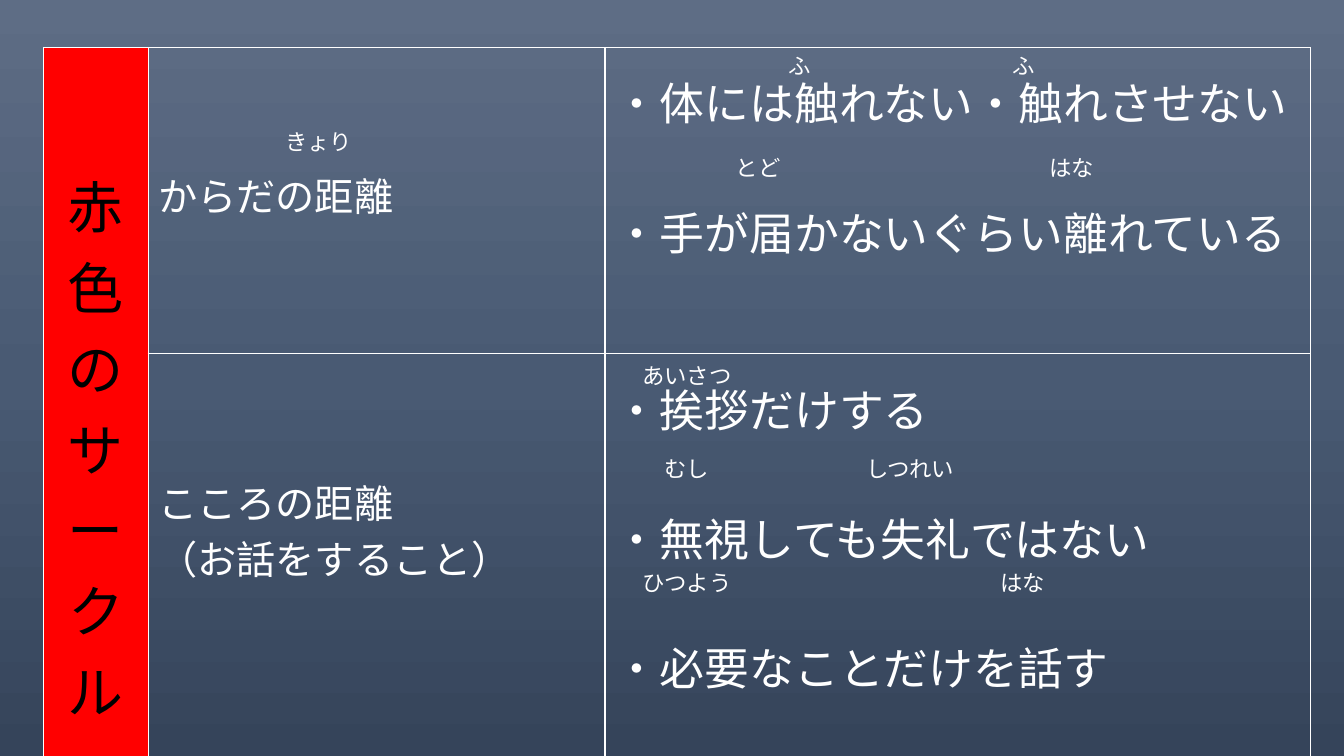
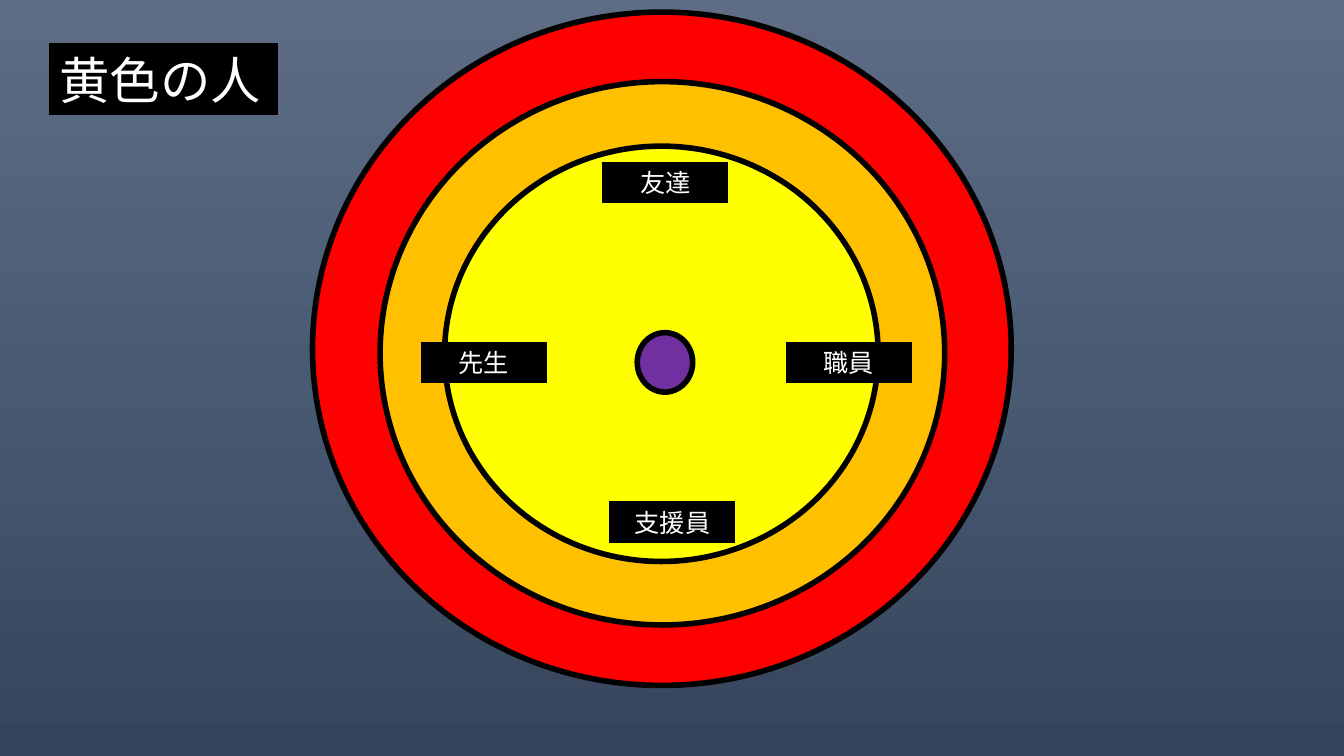
from copy import deepcopy
from dataclasses import dataclass

from lxml.etree import SubElement
from pptx import Presentation
from pptx.dml.color import RGBColor
from pptx.enum.shapes import MSO_SHAPE
from pptx.enum.text import MSO_ANCHOR, PP_ALIGN
from pptx.oxml.ns import qn
from pptx.util import Inches, Pt

FONT = "Noto Sans CJK JP"
WHITE, BLACK, RED = "FFFFFF", "000000", "FF0000"
ORANGE, YELLOW, PURPLE = "FFC000", "FFFF00", "7030A0"
GRADIENT = ("5E6D85", "495A73", "35445A")
RUBY_SIZE = 16
RUBY_EM = RUBY_SIZE / 72


@dataclass(frozen=True)
class Ruby:
    text: str
    line_left: float
    top: float
    column: int = 0


@dataclass(frozen=True)
class Box:
    left: float
    top: float
    width: float
    height: float

    def lengths(self):
        return tuple(Inches(n) for n in (self.left, self.top, self.width, self.height))


@dataclass(frozen=True)
class Circle:
    box: Box
    fill: str


@dataclass(frozen=True)
class Label:
    text: str
    box: Box
    size: float = 18
    align: PP_ALIGN = PP_ALIGN.CENTER


@dataclass(frozen=True)
class CellText:
    lines: tuple
    size: float
    top_margin: float
    gap: float = 0
    colour: str = WHITE


RUBIES = (
    Ruby("ふ", 7.72, 0.47),
    Ruby("ふ", 7.72, 0.47, 10),
    Ruby("とど", 7.2, 1.48),
    Ruby("はな", 7.2, 1.48, 14),
    Ruby("きょり", 2.73, 1.22),
    Ruby("あいさつ", 6.27, 3.54),
    Ruby("むし", 6.27, 4.47, 1),
    Ruby("しつれい", 6.27, 4.47, 10),
    Ruby("ひつよう", 6.27, 5.6),
    Ruby("はな", 6.27, 5.6, 16),
)

HEADING = CellText(("赤色のサークル",), 40, 1.15, colour=BLACK)

DISTANCES = (
    (
        CellText(("からだの距離",), 28, 1.18),
        CellText(("・体には触れない・触れさせない", "・手が届かないぐらい離れている"), 32, 0.21, 46),
    ),
    (
        CellText(("こころの距離", "（お話をすること）"), 28, 1.18),
        CellText(
            ("・挨拶だけする", "・無視しても失礼ではない", "・必要なことだけを話す"),
            32, 0.21, 46,
        ),
    ),
)

CIRCLES = (
    Circle(Box(3.1, 0.12, 6.93, 6.68), RED),
    Circle(Box(3.77, 0.81, 5.6, 5.39), ORANGE),
    Circle(Box(4.41, 1.45, 4.3, 4.12), YELLOW),
    Circle(Box(6.32, 3.3, 0.55, 0.59), PURPLE),
)

LABELS = (
    Label("先生", Box(4.18, 3.4, 1.24, 0.4)),
    Label("支援員", Box(6.05, 4.98, 1.24, 0.4)),
    Label("職員", Box(7.8, 3.4, 1.24, 0.4)),
    Label("友達", Box(5.98, 1.61, 1.24, 0.4)),
    Label("黄色の人", Box(0.49, 0.43, 2.26, 0.71), 36, PP_ALIGN.LEFT),
)


def rgb(colour: str) -> RGBColor:
    return RGBColor.from_string(colour)


def add_run(paragraph, text: str, size: float, colour: str = WHITE) -> None:
    run = paragraph.add_run()
    run.text = text
    run.font.size = Pt(size)
    run.font.name = FONT
    run.font.color.rgb = rgb(colour)
    SubElement(run.font._element, qn("a:ea"), typeface=FONT)


def set_background(master) -> None:
    fill = master.background.fill
    fill.gradient()
    fill.gradient_angle = 270
    stop_list = master.element.find(".//" + qn("p:bg")).find(".//" + qn("a:gsLst"))
    stop_list.append(deepcopy(stop_list[0]))
    for index, (stop, colour) in enumerate(zip(fill.gradient_stops, GRADIENT)):
        stop.position = index / (len(GRADIENT) - 1)
        stop.color.rgb = rgb(colour)


def add_borders(cell) -> None:
    properties = cell._tc.get_or_add_tcPr()
    for position, side in enumerate(("a:lnL", "a:lnR", "a:lnT", "a:lnB")):
        line = properties.makeelement(qn(side), {"w": str(Pt(1))})
        solid = SubElement(line, qn("a:solidFill"))
        SubElement(solid, qn("a:srgbClr"), val=WHITE)
        properties.insert(position, line)


def write_cell(cell, content: CellText) -> None:
    cell.margin_top = Inches(content.top_margin)
    cell.vertical_anchor = MSO_ANCHOR.TOP
    frame = cell.text_frame
    for index, line in enumerate(content.lines):
        paragraph = frame.add_paragraph() if index else frame.paragraphs[0]
        if index:
            paragraph.space_before = Pt(content.gap)
        add_run(paragraph, line, content.size, content.colour)


def add_distance_table(slide) -> None:
    table = slide.shapes.add_table(2, 3, *Box(0.43, 0.47, 12.58, 6.53).lengths()).table
    table.first_row = False
    table.horz_banding = False
    for column, width in zip(table.columns, (1.04, 4.53, 7)):
        column.width = Inches(width)
    for row, height in zip(table.rows, (3.04, 3.49)):
        row.height = Inches(height)
    for cell in table.iter_cells():
        cell.fill.background()
        add_borders(cell)
    for row, contents in enumerate(DISTANCES):
        for column, content in enumerate(contents, start=1):
            write_cell(table.cell(row, column), content)

    heading = table.cell(0, 0)
    heading.merge(table.cell(1, 0))
    heading.fill.solid()
    heading.fill.fore_color.rgb = rgb(RED)
    write_cell(heading, HEADING)
    heading._tc.get_or_add_tcPr().set("vert", "eaVert")
    heading.text_frame.paragraphs[0].alignment = PP_ALIGN.CENTER


def add_ruby(slide, ruby: Ruby) -> None:
    left = ruby.line_left + ruby.column * RUBY_EM
    width = (len(ruby.text) + 1) * RUBY_EM + 0.2
    shape = slide.shapes.add_textbox(*Box(left, ruby.top, width, 0.37).lengths())
    shape.text_frame.word_wrap = True
    add_run(shape.text_frame.paragraphs[0], ruby.text, RUBY_SIZE)


def add_filled_shape(slide, kind: MSO_SHAPE, box: Box, fill: str, line_width: float):
    shape = slide.shapes.add_shape(kind, *box.lengths())
    shape.shadow.inherit = False
    shape.fill.solid()
    shape.fill.fore_color.rgb = rgb(fill)
    shape.line.color.rgb = rgb(BLACK)
    shape.line.width = Pt(line_width)
    return shape


def add_label(slide, label: Label) -> None:
    shape = add_filled_shape(slide, MSO_SHAPE.RECTANGLE, label.box, BLACK, 0.75)
    frame = shape.text_frame
    frame.word_wrap = True
    frame.vertical_anchor = MSO_ANCHOR.MIDDLE
    paragraph = frame.paragraphs[0]
    paragraph.alignment = label.align
    add_run(paragraph, label.text, label.size)


def main() -> None:
    presentation = Presentation()
    presentation.slide_width = Inches(13.33)
    presentation.slide_height = Inches(7.5)
    set_background(presentation.slide_master)
    blank = presentation.slide_layouts[6]

    distance_slide = presentation.slides.add_slide(blank)
    add_distance_table(distance_slide)
    for ruby in RUBIES:
        add_ruby(distance_slide, ruby)

    circle_slide = presentation.slides.add_slide(blank)
    for circle in CIRCLES:
        add_filled_shape(circle_slide, MSO_SHAPE.OVAL, circle.box, circle.fill, 4)
    for label in LABELS:
        add_label(circle_slide, label)

    presentation.save("out.pptx")


if __name__ == "__main__":
    main()
